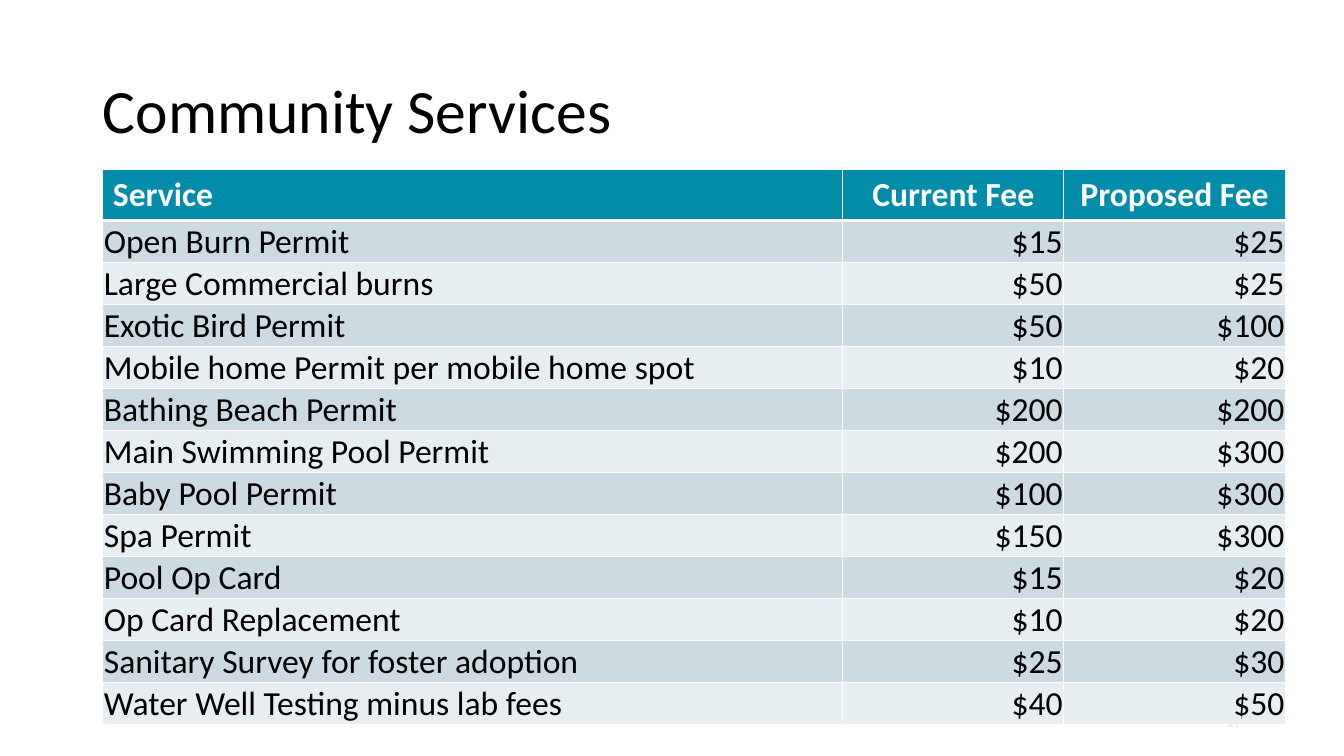
from dataclasses import dataclass
from typing import Any

from lxml import etree
from pptx import Presentation
from pptx.dml.color import RGBColor
from pptx.enum import text
from pptx.oxml import ns
from pptx.util import Inches, Pt

FONT_NAME = "Calibri"
BLACK = RGBColor(0x00, 0x00, 0x00)
WHITE = RGBColor(0xFF, 0xFF, 0xFF)
TEAL = RGBColor(0x01, 0x8C, 0xAA)
DARK_BAND = RGBColor(0xCC, 0xDA, 0xE2)
LIGHT_BAND = RGBColor(0xE7, 0xEE, 0xF1)
PALE_GREY = RGBColor(0xEB, 0xEC, 0xEE)

LEFT, CENTER, RIGHT = text.PP_ALIGN.LEFT, text.PP_ALIGN.CENTER, text.PP_ALIGN.RIGHT
MIDDLE, BOTTOM = text.MSO_ANCHOR.MIDDLE, text.MSO_ANCHOR.BOTTOM
COLUMN_WIDTHS = (7.34, 2.19, 2.2)
TABLE_HEIGHT = 5.42
HEADINGS = ("Service", "Current Fee", "Proposed Fee")
HEADING_ALIGNMENTS = (LEFT, CENTER, CENTER)
FEE_ALIGNMENTS = (LEFT, RIGHT, RIGHT)
FEE_CELL_FORMAT = {
    "vertical_anchor": BOTTOM,
    "margin_left": Inches(0.01),
    "margin_right": Inches(0.01),
    "margin_top": Inches(0.01),
    "margin_bottom": 0,
}


@dataclass(frozen=True)
class Fee:
    service: str
    current: int
    proposed: int

    def labels(self) -> tuple[str, str, str]:
        return self.service, f"${self.current}", f"${self.proposed}"


FEES = (
    Fee("Open Burn Permit", 15, 25),
    Fee("Large Commercial burns", 50, 25),
    Fee("Exotic Bird Permit", 50, 100),
    Fee("Mobile home Permit per mobile home spot", 10, 20),
    Fee("Bathing Beach Permit", 200, 200),
    Fee("Main Swimming Pool Permit", 200, 300),
    Fee("Baby Pool Permit", 100, 300),
    Fee("Spa Permit", 150, 300),
    Fee("Pool Op Card", 15, 20),
    Fee("Op Card Replacement", 10, 20),
    Fee("Sanitary Survey for foster adoption", 25, 30),
    Fee("Water Well Testing minus lab fees", 40, 50),
)


def set_values(target: Any, values: dict[str, Any]) -> None:
    for name, value in values.items():
        setattr(target, name, value)


def write(frame: Any, words: str, size: float, color: RGBColor,
          bold: bool = False, alignment: Any = LEFT) -> None:
    frame.text = words
    paragraph = frame.paragraphs[0]
    paragraph.alignment = alignment
    font = paragraph.runs[0].font
    set_values(font, {"name": FONT_NAME, "size": Pt(size), "bold": bold})
    font.color.rgb = color


def add_borders(cell: Any, top: float, bottom: float) -> None:
    properties = cell._tc.get_or_add_tcPr()
    for side, width in {"L": 1, "R": 1, "T": top, "B": bottom}.items():
        line = etree.SubElement(properties, ns.qn(f"a:ln{side}"), w=str(Pt(width)))
        fill = etree.SubElement(line, ns.qn("a:solidFill"))
        etree.SubElement(fill, ns.qn("a:srgbClr"), val=str(WHITE))


def fill_cell(cell: Any, color: RGBColor) -> None:
    cell.fill.solid()
    cell.fill.fore_color.rgb = color


def add_title(slide: Any) -> None:
    title = slide.shapes.title
    set_values(title, {"left": Inches(0.92), "top": Inches(0.4),
                       "width": Inches(11.5), "height": Inches(1.45)})
    title.text_frame.vertical_anchor = MIDDLE
    write(title.text_frame, "Community Services", 44, BLACK)
    title.text_frame.paragraphs[0].line_spacing = 0.9


def add_fee_table(slide: Any) -> None:
    row_count = len(FEES) + 1
    table = slide.shapes.add_table(
        row_count, len(HEADINGS), Inches(1.02), Inches(1.68),
        Inches(sum(COLUMN_WIDTHS)), Inches(TABLE_HEIGHT)).table
    for column, width in zip(table.columns, COLUMN_WIDTHS):
        column.width = Inches(width)
    for row in table.rows:
        row.height = Inches(TABLE_HEIGHT / row_count)

    # Header row
    for cell, heading, alignment in zip(table.rows[0].cells, HEADINGS, HEADING_ALIGNMENTS):
        write(cell.text_frame, heading, 24, WHITE, True, alignment)
        add_borders(cell, top=1, bottom=3)
        fill_cell(cell, TEAL)

    # Banded fee rows
    for index, fee in enumerate(FEES):
        cells = table.rows[index + 1].cells
        for cell, label, alignment in zip(cells, fee.labels(), FEE_ALIGNMENTS):
            write(cell.text_frame, label, 24, BLACK, alignment=alignment)
            set_values(cell, FEE_CELL_FORMAT)
            add_borders(cell, top=1 if index else 3, bottom=1)
            fill_cell(cell, LIGHT_BAND if index % 2 else DARK_BAND)


def add_slide_number(slide: Any) -> None:
    box = slide.shapes.add_textbox(Inches(11.89), Inches(6.95), Inches(0.53), Inches(0.4))
    set_values(box.text_frame, {"word_wrap": True, "vertical_anchor": MIDDLE})
    write(box.text_frame, "17", 12, PALE_GREY, True, RIGHT)


def main() -> None:
    presentation = Presentation()
    set_values(presentation, {"slide_width": Inches(13.33), "slide_height": Inches(7.5)})
    slide = presentation.slides.add_slide(presentation.slide_layouts[5])
    add_title(slide)
    add_fee_table(slide)
    add_slide_number(slide)
    presentation.save("out.pptx")


if __name__ == "__main__":
    main()
